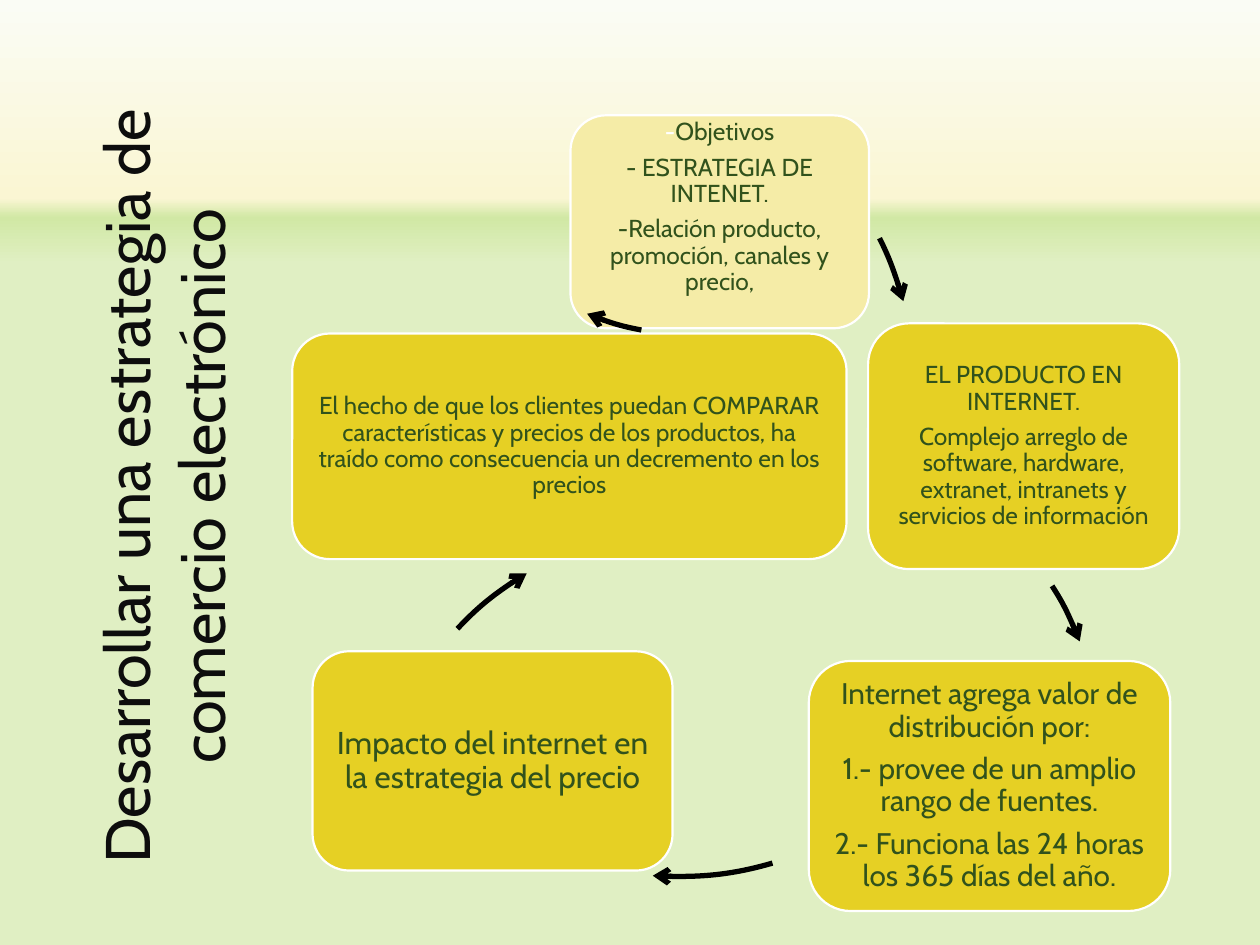
from lxml.etree import SubElement
from pptx import Presentation
from pptx.dml.color import RGBColor
from pptx.enum.shapes import MSO_SHAPE
from pptx.enum.text import MSO_ANCHOR, PP_ALIGN
from pptx.oxml.ns import qn
from pptx.util import Pt

FONT = "Cabin"
GREEN, GOLD, CREAM, WHITE = "31521C", "E6D024", "F5ECA7", "FFFFFF"
TITLE = "Desarrollar una estrategia de comercio electrónico"
TITLE_BOX = (-140.4, 202.1, 466.6, 151.9)
BACKGROUND = [(0, "FAFCF5"), (21, "FAF6D3"), (23, "D1E8A5"), (28, "E0EFC3")]

STEPS = [
    ((326, 65.9, 170.6, 121.7), CREAM, 14, 4.3, 16, [
        [("-", WHITE), ("Objetivos", GREEN)],
        [("- ESTRATEGIA DE INTENET.", GREEN)],
        [("-Relación producto, promoción, canales y precio,", GREEN)]]),
    ((496.1, 184.8, 177.8, 140.4), GOLD, 14, 4.3, 0, [
        [("EL PRODUCTO EN INTERNET.", GREEN)],
        [("Complejo arreglo de software, hardware, extranet, intranets y "
          "servicios de información", GREEN)]]),
    ((462.2, 377.7, 206.6, 142.9), GOLD, 17, 5, 0, [
        [("Internet agrega valor de distribución por:", GREEN)],
        [("1.- provee de un amplio rango de fuentes.", GREEN)],
        [("2.- Funciona las 24 horas los 365 días del año.", GREEN)]]),
    ((178.6, 372.2, 205.7, 125.3), GOLD, 18, 5, 0, [
        [("Impacto del internet en la estrategia del precio", GREEN)]]),
    ((167, 190.6, 316.8, 128.9), GOLD, 14, 4.3, 0, [
        [("El hecho de que los clientes puedan COMPARAR características y precios "
          "de los productos, ha traído como consecuencia un decremento en los "
          "precios", GREEN)]]),
]

CYCLE_SIZE = 382.3
ARROWS = [
    ((139.7, 28.8),
     [(502.6, 136.1), (508.3, 147.6), (512.6, 159.8), (516.2, 172.1)]),
    ((247.7, 244.8),
     [(601.2, 334.8), (607.7, 344.9), (612.7, 355.7), (617, 366.5)]),
    ((195.1, 118.8),
     [(441.4, 493.2), (419, 499.7), (396, 501.8), (373, 500.4)]),
    ((208.8, 299.5),
     [(261.4, 359.3), (272.9, 347), (286.6, 336.2), (301, 327.6)]),
    ((214.6, -189.4),
     [(366.5, 188.6), (355.7, 186.5), (345.6, 183.6), (335.5, 179.3)]),
]


def rgb(value):
    return RGBColor.from_string(value)


def points(values):
    return [Pt(v) for v in values]


def paint_background(s):
    fill = s.background.fill
    fill.gradient()
    fill.gradient_angle = 270
    stops = s.element.find(".//" + qn("a:gsLst"))
    for stop in list(stops):
        stops.remove(stop)
    for percent, color in BACKGROUND:
        stop = SubElement(stops, qn("a:gs"), pos=str(percent * 1000))
        SubElement(stop, qn("a:srgbClr"), val=color)


def add_run(p, text, size, color):
    r = p.add_run()
    r.text = text
    r.font.name = FONT
    r.font.size = Pt(size)
    r.font.color.rgb = rgb(color)


def add_step(s, box, fill, size, inset, extra, paragraphs):
    sp = s.shapes.add_shape(MSO_SHAPE.ROUNDED_RECTANGLE, *points(box))
    sp.shadow.inherit = False
    sp.fill.solid()
    sp.fill.fore_color.rgb = rgb(fill)
    sp.line.color.rgb = rgb(WHITE)
    sp.line.width = Pt(1.25)
    tf = sp.text_frame
    tf.word_wrap = True
    tf.vertical_anchor = MSO_ANCHOR.MIDDLE
    tf.margin_left = tf.margin_right = tf.margin_top = Pt(inset)
    tf.margin_bottom = Pt(inset + extra)
    for i, runs in enumerate(paragraphs):
        p = tf.add_paragraph() if i else tf.paragraphs[0]
        p.alignment = PP_ALIGN.CENTER
        p.line_spacing = 0.9
        p.space_after = Pt(round(size * 0.35, 1))
        for text, color in runs:
            add_run(p, text, size, color)


def add_arrow(s, corner, curve):
    left, top = corner
    start, *rest = [points((x - left, y - top)) for x, y in curve]
    builder = s.shapes.build_freeform(*start)
    builder.add_line_segments(rest, close=False)
    sp = builder.convert_to_shape()
    sp.left, sp.top = points(corner)
    sp.width = sp.height = Pt(CYCLE_SIZE)
    sp.shadow.inherit = False
    sp.fill.background()
    sp.line.color.rgb = rgb("000000")
    sp.line.width = Pt(3)
    outline = sp.element.find(".//" + qn("a:path"))
    for side in ("w", "h"):
        outline.set(side, str(Pt(CYCLE_SIZE)))
    for child in list(outline):
        outline.remove(child)
    for tag, stops in (("a:moveTo", [start]), ("a:cubicBezTo", rest)):
        command = SubElement(outline, qn(tag))
        for x, y in stops:
            SubElement(command, qn("a:pt"), x=str(x), y=str(y))
    SubElement(sp.element.spPr.find(qn("a:ln")), qn("a:tailEnd"), type="arrow")


def add_title(s):
    sp = s.shapes.add_textbox(*points(TITLE_BOX))
    sp.rotation = 270
    tf = sp.text_frame
    tf.word_wrap = True
    tf.vertical_anchor = MSO_ANCHOR.MIDDLE
    p = tf.paragraphs[0]
    p.alignment = PP_ALIGN.CENTER
    p.space_after = Pt(2)
    add_run(p, TITLE, 36, "0D0D0D")


def main():
    prs = Presentation()
    prs.slide_width, prs.slide_height = Pt(720), Pt(540)
    s = prs.slides.add_slide(prs.slide_layouts[6])
    paint_background(s)
    for step, arrow in zip(STEPS, ARROWS):
        add_step(s, *step)
        add_arrow(s, *arrow)
    add_title(s)
    prs.save("out.pptx")


if __name__ == "__main__":
    main()
